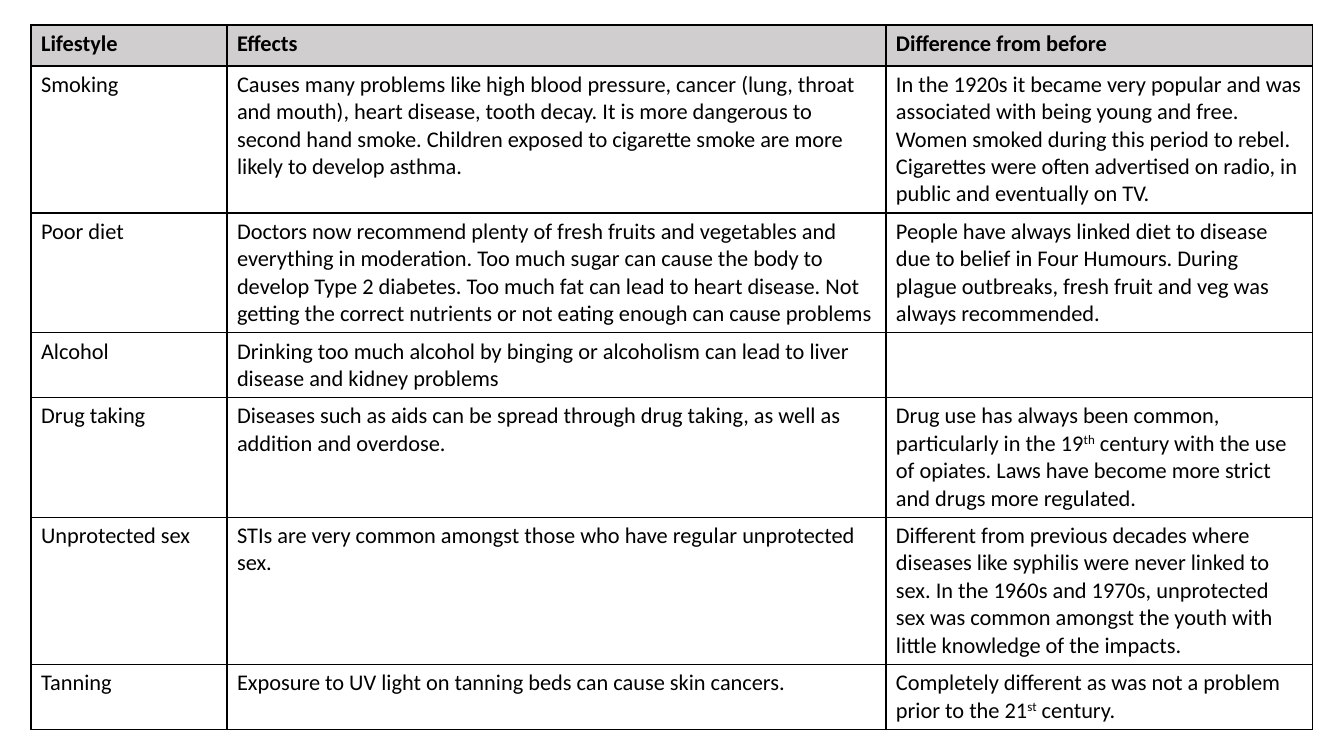
"""Build a slide with a table of lifestyle factors and their health effects."""

from dataclasses import dataclass

from lxml import etree
from pptx import Presentation
from pptx.dml.color import RGBColor
from pptx.oxml.ns import qn
from pptx.table import _Cell
from pptx.util import Emu, Pt

EMU_PER_PX = 914400 / 100.8
SLIDE_WIDTH, SLIDE_HEIGHT = 1344, 756
TABLE_LEFT, TABLE_TOP = 31, 25
COLUMN_WIDTHS = (196, 659, 427)
HEADER_HEIGHT = 41
BLANK_LAYOUT = 6
FONT_NAME = "Calibri"
FONT_SIZE = Pt(16)
BORDER_WIDTH = Pt(1)
SUPERSCRIPT_MARK = "^"
SUPERSCRIPT_BASELINE = "30000"
BLACK = RGBColor(0x00, 0x00, 0x00)
HEADER_GRAY = RGBColor(0xD0, 0xCE, 0xCE)


@dataclass(frozen=True)
class LifestyleRow:
    """One table row; text between superscript marks is raised."""

    height: int
    lifestyle: str
    effects: str
    difference: str
    is_header: bool = False


ROWS = (
    LifestyleRow(HEADER_HEIGHT, "Lifestyle", "Effects", "Difference from before", True),
    LifestyleRow(
        147,
        "Smoking",
        "Causes many problems like high blood pressure, cancer (lung, throat and mouth), "
        "heart disease, tooth decay. It is more dangerous to second hand smoke. Children "
        "exposed to cigarette smoke are more likely to develop asthma.",
        "In the 1920s it became very popular and was associated with being young and free. "
        "Women smoked during this period to rebel. Cigarettes were often advertised on "
        "radio, in public and eventually on TV.",
    ),
    LifestyleRow(
        119,
        "Poor diet",
        "Doctors now recommend plenty of fresh fruits and vegetables and everything in "
        "moderation. Too much sugar can cause the body to develop Type 2 diabetes. Too much "
        "fat can lead to heart disease. Not getting the correct nutrients or not eating "
        "enough can cause problems",
        "People have always linked diet to disease due to belief in Four Humours. During "
        "plague outbreaks, fresh fruit and veg was always recommended.",
    ),
    LifestyleRow(
        64,
        "Alcohol",
        "Drinking too much alcohol by binging or alcoholism can lead to liver disease and "
        "kidney problems",
        "",
    ),
    LifestyleRow(
        119,
        "Drug taking",
        "Diseases such as aids can be spread through drug taking, as well as addition and "
        "overdose.",
        "Drug use has always been common, particularly in the 19^th^ century with the use of "
        "opiates. Laws have become more strict and drugs more regulated.",
    ),
    LifestyleRow(
        147,
        "Unprotected sex",
        "STIs are very common amongst those who have regular unprotected sex.",
        "Different from previous decades where diseases like syphilis were never linked to "
        "sex. In the 1960s and 1970s, unprotected sex was common amongst the youth with "
        "little knowledge of the impacts.",
    ),
    LifestyleRow(
        64,
        "Tanning",
        "Exposure to UV light on tanning beds can cause skin cancers.",
        "Completely different as was not a problem prior to the 21^st^ century.",
    ),
)


def px(length: int) -> Emu:
    """Convert pixels to EMU."""
    return Emu(round(length * EMU_PER_PX))


def write_text(cell: _Cell, text: str, bold: bool) -> None:
    """Write a cell's text, raising the parts between superscript marks."""
    if not text:
        return
    paragraph = cell.text_frame.paragraphs[0]
    for index, part in enumerate(text.split(SUPERSCRIPT_MARK)):
        run = paragraph.add_run()
        run.text = part
        run.font.name = FONT_NAME
        run.font.size = FONT_SIZE
        run.font.bold = bold
        run.font.color.rgb = BLACK
        if index % 2:
            run.font._element.set("baseline", SUPERSCRIPT_BASELINE)


def add_borders(cell: _Cell) -> None:
    """Draw a solid line on all four sides of a cell."""
    properties = cell._tc.get_or_add_tcPr()
    for position, side in enumerate(("a:lnL", "a:lnR", "a:lnT", "a:lnB")):
        line = etree.Element(qn(side), w=str(BORDER_WIDTH))
        fill = etree.SubElement(line, qn("a:solidFill"))
        etree.SubElement(fill, qn("a:srgbClr"), val=str(BLACK))
        properties.insert(position, line)


def format_cell(cell: _Cell, text: str, is_header: bool) -> None:
    """Fill, write and outline one cell."""
    if is_header:
        cell.fill.solid()
        cell.fill.fore_color.rgb = HEADER_GRAY
    else:
        cell.fill.background()
    write_text(cell, text, is_header)
    add_borders(cell)


def main() -> None:
    """Build and save the presentation."""
    presentation = Presentation()
    presentation.slide_width = px(SLIDE_WIDTH)
    presentation.slide_height = px(SLIDE_HEIGHT)
    slide = presentation.slides.add_slide(presentation.slide_layouts[BLANK_LAYOUT])
    table = slide.shapes.add_table(
        len(ROWS),
        len(COLUMN_WIDTHS),
        px(TABLE_LEFT),
        px(TABLE_TOP),
        px(sum(COLUMN_WIDTHS)),
        px(sum(row.height for row in ROWS)),
    ).table
    table.first_row = False
    table.horz_banding = False
    for column, width in zip(table.columns, COLUMN_WIDTHS):
        column.width = px(width)
    for table_row, row in zip(table.rows, ROWS):
        table_row.height = px(row.height)
        texts = (row.lifestyle, row.effects, row.difference)
        for cell, text in zip(table_row.cells, texts):
            format_cell(cell, text, row.is_header)
    presentation.save("out.pptx")


if __name__ == "__main__":
    main()
